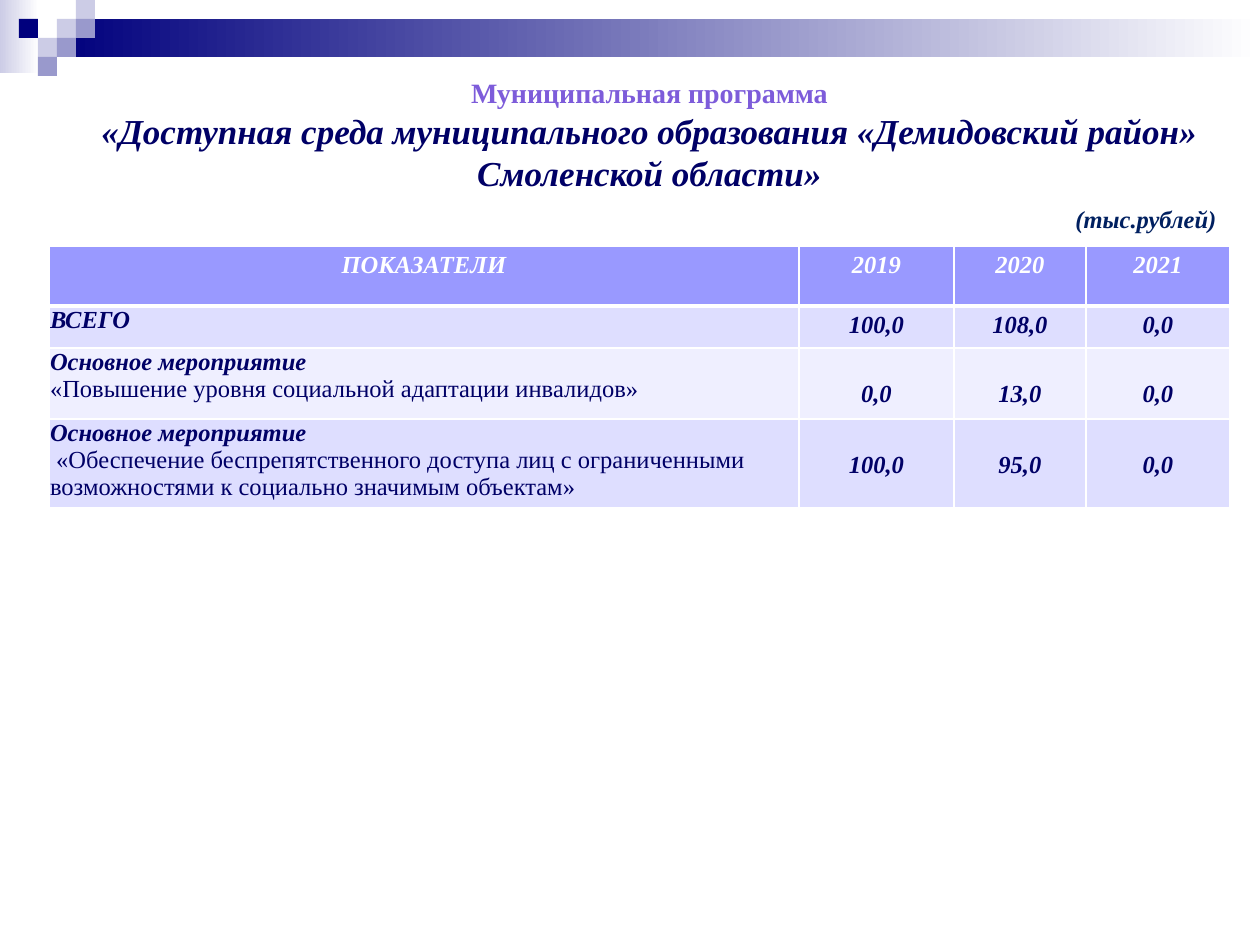
"""Build the slide on the accessible environment municipal programme."""
import pptx
import pptx.chart.data
import pptx.dml.color
import pptx.enum.dml
import pptx.enum.shapes
import pptx.enum.text
import pptx.oxml
import pptx.oxml.ns
import pptx.util

RGBColor = pptx.dml.color.RGBColor
ALIGN = pptx.enum.text.PP_ALIGN
ANCHOR = pptx.enum.text.MSO_ANCHOR

NAVY = RGBColor(0x00, 0x00, 0x7D)
INK = RGBColor(0x00, 0x00, 0x66)
UNIT_INK = RGBColor(0x00, 0x20, 0x60)
VIOLET = RGBColor(0x7D, 0x5C, 0xDA)
PALE = RGBColor(0xCC, 0xCC, 0xE6)
MID = RGBColor(0x99, 0x99, 0xCC)
WHITE = RGBColor(0xFF, 0xFF, 0xFF)
HEADER = RGBColor(0x99, 0x99, 0xFF)
BAND_DARK = RGBColor(0xDE, 0xDE, 0xFF)
BAND_LIGHT = RGBColor(0xEF, 0xEF, 0xFF)

FONT = "Times New Roman"
PX = 914400 // 126
SQUARE = 19

GRADIENTS = [((0, 0, 39, 73), PALE), ((57, 19, 1203, 38), NAVY)]
SQUARES = [(3, 1, PALE), (4, 0, PALE), (4, 1, MID), (2, 2, PALE),
           (1, 1, NAVY), (3, 2, MID), (2, 3, MID)]

PROGRAMME = "Муниципальная программа"
NAME = "«Доступная среда муниципального образования «Демидовский район» Смоленской области»"
UNIT = "(тыс.рублей)"
ACTIVITY = "Основное мероприятие"
COLUMNS = [750, 155, 132, 144]
ROWS = [
    (60, 6, HEADER, ["ПОКАЗАТЕЛИ"], ["2019", "2020", "2021"]),
    (42, 6, BAND_DARK, ["ВСЕГО"], ["100,0", "108,0", "0,0"]),
    (71, 33, BAND_LIGHT,
     [ACTIVITY, "«Повышение уровня социальной адаптации инвалидов»"],
     ["0,0", "13,0", "0,0"]),
    (89, 33, BAND_DARK,
     [ACTIVITY, " «Обеспечение беспрепятственного доступа лиц с ограниченными "
                "возможностями к социально значимым объектам»"],
     ["100,0", "95,0", "0,0"]),
]


def px(*values):
    return [v * PX for v in values]


def add_block(s, box, color, gradient=False):
    sp = s.shapes.add_shape(pptx.enum.shapes.MSO_SHAPE.RECTANGLE, *px(*box))
    sp.shadow.inherit = False
    sp.line.fill.background()
    if gradient:
        sp.fill.gradient()
        sp.fill.gradient_angle = 0
        for stop, position, tint in zip(sp.fill.gradient_stops, (0, 1), (color, WHITE)):
            stop.position = position
            stop.color.rgb = tint
    else:
        sp.fill.solid()
        sp.fill.fore_color.rgb = color


def write(tf, lines, align):
    """Fill a text frame with (text, size, color, bold, italic) lines."""
    for i, (text, size, color, bold, italic) in enumerate(lines):
        p = tf.add_paragraph() if i else tf.paragraphs[0]
        p.alignment = align
        p.font.name = FONT
        p.font.size = pptx.util.Pt(size)
        p.font.color.rgb = color
        p.font.bold = bold
        p.font.italic = italic
        p.add_run().text = text


def add_text(s, box, lines, align, wrap=True):
    tf = s.shapes.add_textbox(*px(*box)).text_frame
    tf.word_wrap = wrap
    tf.vertical_anchor = ANCHOR.MIDDLE
    write(tf, lines, align)


def set_borders(cell, bottom):
    tcpr = cell._tc.get_or_add_tcPr()
    widths = {"lnL": 1, "lnR": 1, "lnT": 1, "lnB": bottom}
    for i, (tag, width) in enumerate(widths.items()):
        tcpr.insert(i, pptx.oxml.parse_xml(
            f'<a:{tag} {pptx.oxml.ns.nsdecls("a")} w="{width * 12700}">'
            f'<a:solidFill><a:srgbClr val="{WHITE}"/></a:solidFill></a:{tag}>'))


def add_budget_table(s):
    size = sum(COLUMNS), sum(row[0] for row in ROWS)
    table = s.shapes.add_table(len(ROWS), len(COLUMNS), *px(49, 246, *size)).table
    for column, width in zip(table.columns, COLUMNS):
        column.width = width * PX
    for r, (height, top, fill, labels, values) in enumerate(ROWS):
        table.rows[r].height = height * PX
        color = INK if r else WHITE
        for c, texts in enumerate([labels] + [[v] for v in values]):
            cell = table.cell(r, c)
            cell.fill.solid()
            cell.fill.fore_color.rgb = fill
            is_label = r > 0 and c == 0
            margins = px(1, 1, 1, 0) if is_label else px(12, top, 12, 6)
            (cell.margin_left, cell.margin_top,
             cell.margin_right, cell.margin_bottom) = margins
            lines = [(t, 14, color, i == 0, i == 0) for i, t in enumerate(texts)]
            write(cell.text_frame, lines, ALIGN.LEFT if is_label else ALIGN.CENTER)
            set_borders(cell, 1 if r else 3)


def main():
    prs = pptx.Presentation()
    prs.slide_width, prs.slide_height = px(1260, 945)
    s = prs.slides.add_slide(prs.slide_layouts[6])
    for box, color in GRADIENTS:
        add_block(s, box, color, gradient=True)
    for column, row, color in SQUARES:
        add_block(s, (column * SQUARE, row * SQUARE, SQUARE, SQUARE), color)
    add_text(s, (39, 69, 1221, 131),
             [(PROGRAMME, 16, VIOLET, True, False), (NAME, 20, INK, True, True)],
             ALIGN.CENTER)
    add_budget_table(s)
    add_text(s, (1063, 197, 168, 43), [(UNIT, 14, UNIT_INK, True, True)],
             ALIGN.LEFT, wrap=False)
    prs.save("out.pptx")


if __name__ == "__main__":
    main()
